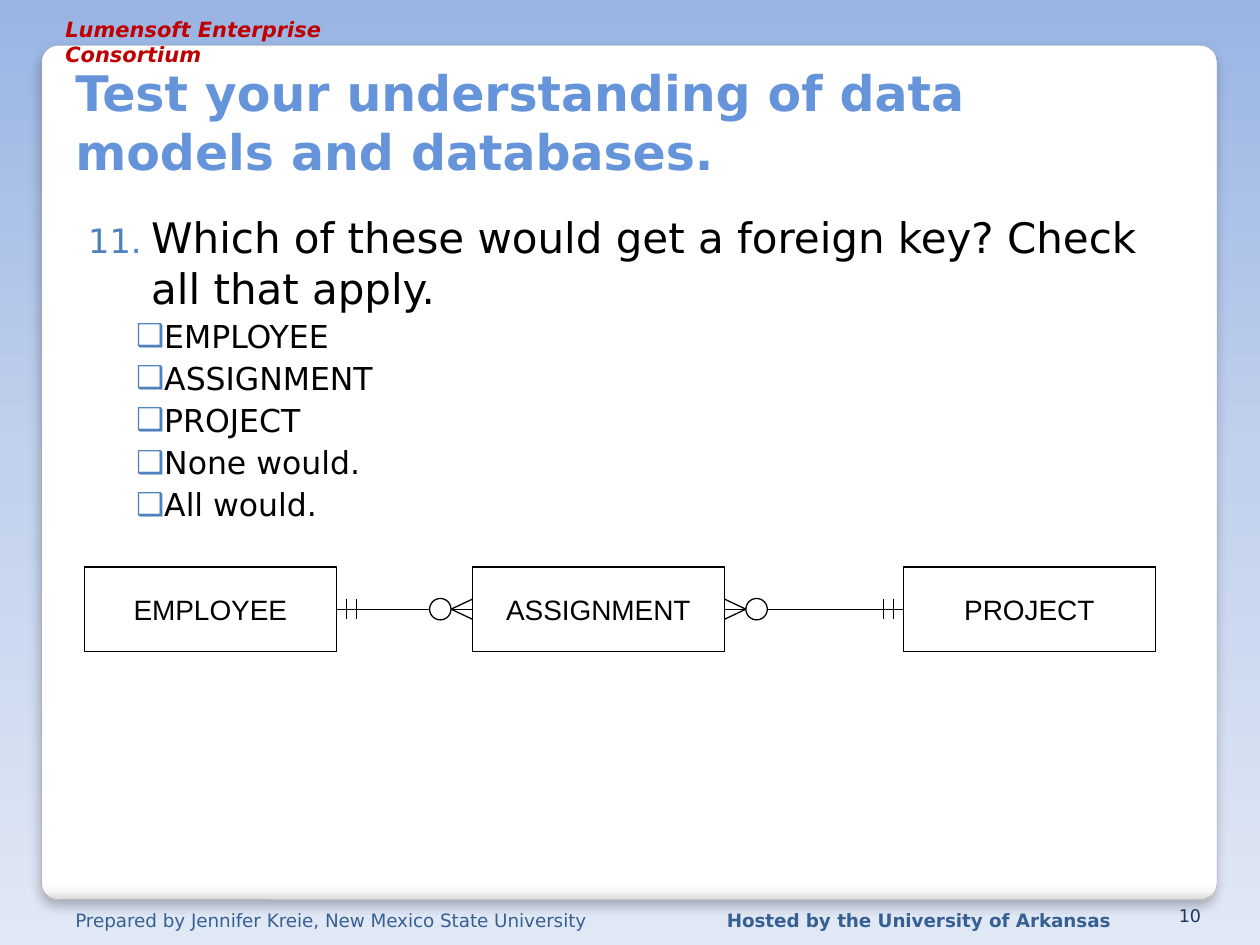
from dataclasses import dataclass

from lxml import etree
from pptx import Presentation
from pptx.dml.color import RGBColor
from pptx.enum import shapes, text
from pptx.oxml import ns
from pptx.util import Inches, Pt


@dataclass(frozen=True)
class Theme:
    font: str = "DejaVu Sans"
    diagram_font: str = "Arial"
    black: str = "000000"
    title: str = "6594DA"
    bullet: str = "4F81BD"
    footer: str = "376092"
    number: str = "17375E"
    banner: str = "C00000"
    edge: str = "A4A4A4"
    sky: tuple = ((0, "9AB5E4"), (50, "C2D1ED"), (100, "E1E8F5"))
    card: tuple = ((0, "FFFFFF"), (98, "FFFFFF"), (99, "F7F7F7"), (100, "DADADA"))
    title_size: int = 28
    question_size: int = 24
    option_size: int = 18
    box_size: int = 16
    banner_size: int = 12
    footer_size: float = 10.5
    number_size: int = 10
    line: float = 0.75


theme = Theme()
deck = Presentation()
deck.slide_width, deck.slide_height = Inches(10), Inches(7.5)
page = deck.slides.add_slide(deck.slide_layouts[6])


def style(para, size, color, font=theme.font, bold=False, italic=False):
    para.font.name, para.font.size = font, Pt(size)
    para.font.bold, para.font.italic = bold, italic
    para.font.color.rgb = RGBColor.from_string(color)


def add_line(x1, y1, x2, y2):
    line = page.shapes.add_connector(
        shapes.MSO_CONNECTOR.STRAIGHT, Inches(x1), Inches(y1), Inches(x2), Inches(y2))
    line.line.width = Pt(theme.line)
    line.line.color.rgb = RGBColor.from_string(theme.black)
    etree.SubElement(line.element.spPr, ns.qn("a:effectLst"))
    return line


# Card and vertical gradients
card = page.shapes.add_shape(
    shapes.MSO_SHAPE.ROUNDED_RECTANGLE, Inches(0.33), Inches(0.36), Inches(9.33), Inches(6.78))
card.adjustments[0] = 0.02
card.line.width = Pt(0.16)
card.line.color.rgb = RGBColor.from_string(theme.edge)
card.shadow.inherit = False
effects = card.element.spPr.find(ns.qn("a:effectLst"))
shadow = etree.SubElement(effects, ns.qn("a:outerShdw"), blurRad=str(Pt(6)),
                          dist=str(Pt(4)), dir="5400000", rotWithShape="0")
shade = etree.SubElement(shadow, ns.qn("a:srgbClr"), val=theme.black)
etree.SubElement(shade, ns.qn("a:alpha"), val="25000")

for fill, owner, stops in (
    (page.background.fill, page.element.cSld, theme.sky),
    (card.fill, card.element.spPr, theme.card),
):
    fill.gradient()
    fill.gradient_angle = 270
    if owner is page.element.cSld:
        owner = owner.find(ns.qn("p:bg"))
    stop_list = next(owner.iter(ns.qn("a:gsLst")))
    for old in list(stop_list):
        stop_list.remove(old)
    for percent, color in stops:
        stop = etree.SubElement(stop_list, ns.qn("a:gs"), pos=str(percent * 1000))
        etree.SubElement(stop, ns.qn("a:srgbClr"), val=color)

# Title, banner, footers and page number
top, bottom = text.MSO_ANCHOR.TOP, text.MSO_ANCHOR.BOTTOM
left, right = text.PP_ALIGN.LEFT, text.PP_ALIGN.RIGHT
for words, place, wrap, anchor, align, look in (
    ("Prepared by Jennifer Kreie, New Mexico State University", (0.5, 7.17, 4.46, 0.23),
     False, top, left, (theme.footer_size, theme.footer)),
    ("Hosted by the University of Arkansas", (5.67, 7.17, 3.33, 0.23),
     False, top, left, (theme.footer_size, theme.footer, theme.font, True)),
    ("Lumensoft Enterprise Consortium", (0.42, 0.08, 3.33, 0.23),
     False, top, left, (theme.banner_size, theme.banner, theme.font, True, True)),
    ("Test your understanding of data models and databases.", (0.5, 0.33, 8.95, 1.15),
     True, bottom, left, (theme.title_size, theme.title, theme.font, True)),
    ("10", (9.13, 7.17, 0.5, 0.23),
     True, bottom, right, (theme.number_size, theme.number)),
):
    frame = page.shapes.add_textbox(*map(Inches, place)).text_frame
    frame.word_wrap, frame.vertical_anchor = wrap, anchor
    para = frame.paragraphs[0]
    para.text, para.alignment = words, align
    style(para, *look)

# Question and options
body = page.shapes.add_textbox(Inches(0.5), Inches(1.58), Inches(8.92), Inches(3.58)).text_frame
body.word_wrap = True
body.margin_left, body.margin_top = Inches(0.2), Inches(0.1)
lines = ("Which of these would get a foreign key? Check all that apply.",
         "EMPLOYEE", "ASSIGNMENT", "PROJECT", "None would.", "All would.")
for index, words in enumerate(lines):
    is_option = index > 0
    para = body.add_paragraph() if is_option else body.paragraphs[0]
    para.text = words
    para.level = int(is_option)
    para.space_before = Pt(2.5)
    indent, hanging = (0.6, -0.22) if is_option else (0.5, -0.5)
    props = para._p.get_or_add_pPr()
    props.set("marL", str(Inches(indent)))
    props.set("indent", str(Inches(hanging)))
    bullet_color = etree.SubElement(props, ns.qn("a:buClr"))
    etree.SubElement(bullet_color, ns.qn("a:srgbClr"), val=theme.bullet)
    if is_option:
        etree.SubElement(props, ns.qn("a:buFont"), typeface=theme.font)
        etree.SubElement(props, ns.qn("a:buChar"), char="❑")
    else:
        etree.SubElement(props, ns.qn("a:buSzPct"), val="80000")
        etree.SubElement(props, ns.qn("a:buAutoNum"), type="arabicPeriod", startAt="11")
    style(para, theme.option_size if is_option else theme.question_size, theme.black)

# Entities
box_width, box_height, box_top = 2, 0.67, 4.5
middle = box_top + box_height / 2
entity_left = {"EMPLOYEE": 0.67, "ASSIGNMENT": 3.75, "PROJECT": 7.17}
entities = {}
for name, x in entity_left.items():
    box = page.shapes.add_shape(shapes.MSO_SHAPE.RECTANGLE, Inches(x), Inches(box_top),
                                Inches(box_width), Inches(box_height))
    box.fill.background()
    box.line.width = Pt(theme.line)
    box.line.color.rgb = RGBColor.from_string(theme.black)
    box.shadow.inherit = False
    box.text_frame.word_wrap = False
    box.text_frame.vertical_anchor = text.MSO_ANCHOR.MIDDLE
    para = box.text_frame.paragraphs[0]
    para.text, para.alignment = name, text.PP_ALIGN.CENTER
    style(para, theme.box_size, theme.black, theme.diagram_font)
    entities[name] = box

# Relationships: one (two bars) to zero-or-many (circle and crow's foot)
foot, reach = 0.17, 0.08
many_box = entities["ASSIGNMENT"]
for one_name, one_x, one_site, many_x, many_site, way in (
    ("EMPLOYEE", entity_left["EMPLOYEE"] + box_width, 3, entity_left["ASSIGNMENT"], 1, 1),
    ("PROJECT", entity_left["PROJECT"], 1, entity_left["ASSIGNMENT"] + box_width, 3, -1),
):
    tip = many_x - way * foot
    circle_far = tip - way * foot
    stem = add_line(one_x, middle, circle_far, middle)
    stem.begin_connect(entities[one_name], one_site)
    circle = page.shapes.add_shape(
        shapes.MSO_SHAPE.OVAL, Inches(min(tip, circle_far)), Inches(middle - foot / 2),
        Inches(foot), Inches(foot))
    circle.fill.background()
    circle.line.width = Pt(theme.line)
    circle.line.color.rgb = RGBColor.from_string(theme.black)
    circle.shadow.inherit = False
    toe = add_line(tip, middle, many_x, middle)
    toe.end_connect(many_box, many_site)
    for offset in (-reach, reach):
        add_line(tip, middle, many_x, middle + offset)
    for step in (1, 2):
        bar_x = one_x + way * step * reach
        add_line(bar_x, middle - reach, bar_x, middle + reach)

deck.save("out.pptx")
